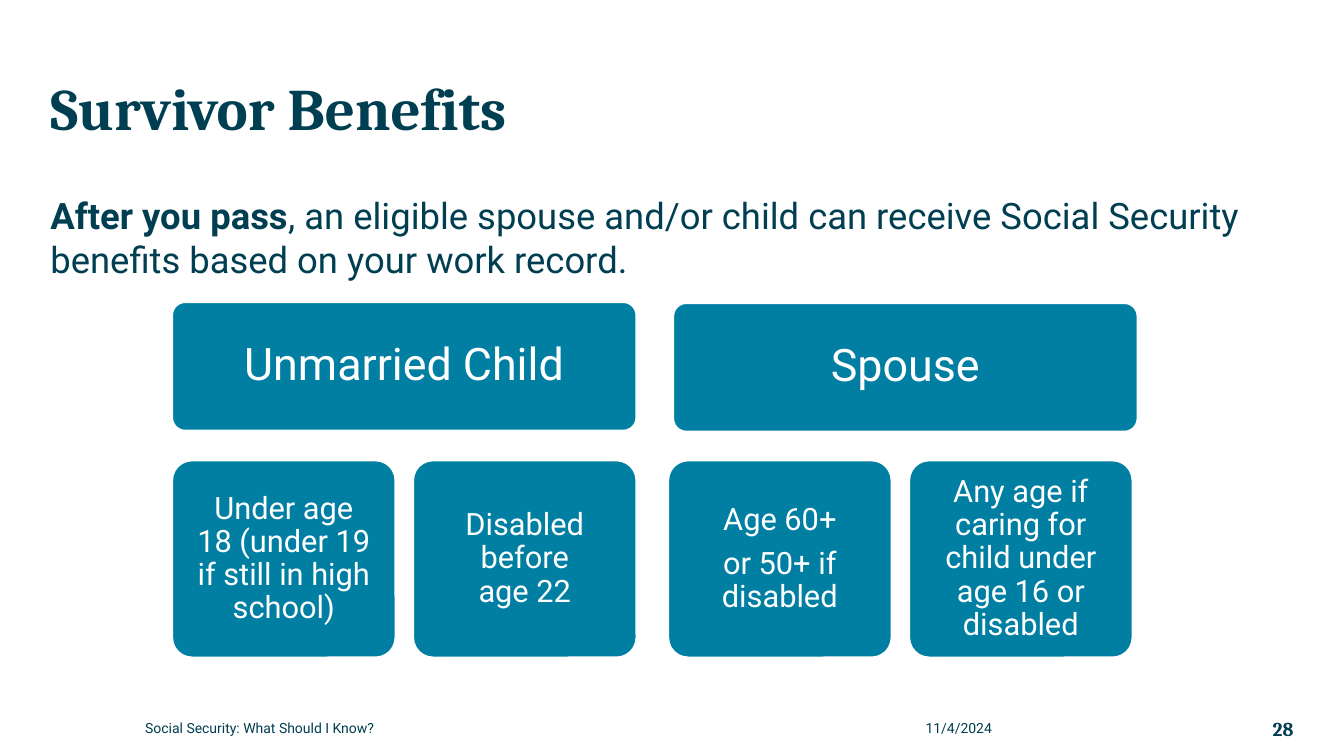
from dataclasses import dataclass

import pptx
import pptx.dml.color
import pptx.enum.shapes
import pptx.enum.text
import pptx.util

Inches = pptx.util.Inches
Pt = pptx.util.Pt
ALIGN = pptx.enum.text.PP_ALIGN
ANCHOR = pptx.enum.text.MSO_ANCHOR


@dataclass(frozen=True)
class Theme:
    ink: str = "003E51"
    card: str = "007FA3"
    white: str = "FFFFFF"
    heading_font: str = "Cambria"
    body_font: str = "Roboto"
    title: int = 42
    group: int = 32
    intro: int = 26
    condition: int = 22
    page: int = 14
    footer: int = 10


theme = Theme()


def style_text(frame, size, color=theme.ink, font=theme.body_font, bold=False,
               align=ALIGN.LEFT, anchor=ANCHOR.MIDDLE, inset=0, line_spacing=1.0):
    """Apply one look to every run of a text frame."""
    frame.word_wrap = True
    frame.auto_size = pptx.enum.text.MSO_AUTO_SIZE.NONE
    frame.vertical_anchor = anchor
    frame.margin_left = frame.margin_right = Inches(inset)
    frame.margin_top = frame.margin_bottom = Inches(inset)
    for paragraph in frame.paragraphs:
        paragraph.alignment = align
        paragraph.line_spacing = line_spacing
        for run in paragraph.runs:
            run.font.size = Pt(size)
            run.font.name = font
            run.font.bold = bold
            run.font.color.rgb = pptx.dml.color.RGBColor.from_string(color)


def add_card(left, top, width, height, text, size, inset):
    card = slide.shapes.add_shape(
        pptx.enum.shapes.MSO_SHAPE.ROUNDED_RECTANGLE,
        Inches(left), Inches(top), Inches(width), Inches(height))
    card.adjustments[0] = 0.1
    card.shadow.inherit = False
    card.fill.solid()
    card.fill.fore_color.rgb = pptx.dml.color.RGBColor.from_string(theme.card)
    card.line.color.rgb = pptx.dml.color.RGBColor.from_string(theme.white)
    card.line.width = Pt(1)
    card.text_frame.text = text
    style_text(card.text_frame, size, theme.white, align=ALIGN.CENTER,
               inset=inset, line_spacing=0.9)
    for paragraph in card.text_frame.paragraphs:
        paragraph.space_after = Pt(round(size * 0.35))
    return card


presentation = pptx.Presentation()
presentation.slide_width = Inches(13.33)
presentation.slide_height = Inches(7.5)
slide = presentation.slides.add_slide(presentation.slide_layouts.get_by_name("Title Only"))

title = slide.shapes.title
title.left, title.top = Inches(0.5), Inches(0.5)
title.width, title.height = Inches(12.33), Inches(0.92)
title.text_frame.text = "Survivor Benefits"
style_text(title.text_frame, theme.title, font=theme.heading_font, bold=True,
           anchor=ANCHOR.BOTTOM, line_spacing=0.9)

intro = slide.shapes.add_textbox(Inches(0.5), Inches(1.92), Inches(12.33), Inches(1))
intro.text_frame.text = "After you pass"
intro.text_frame.paragraphs[0].add_run().text = (
    ", an eligible spouse and/or child can receive Social Security "
    "benefits based on your work record.")
style_text(intro.text_frame, theme.intro, anchor=ANCHOR.TOP)
intro.text_frame.paragraphs[0].runs[0].font.bold = True

# Each survivor: name, left and top of its header, left of its first condition
survivors = [
    ("Unmarried Child", 1.71, 3.0, 1.71,
     ["Under age 18 (under 19 if still in high school)", "Disabled before"]),
    ("Spouse", 6.68, 3.01, 6.63,
     ["Age 60+\nor 50+ if disabled",
      "Any age if caring for child under age 16 or disabled"]),
]
condition_cards = {}
for survivor, header_left, header_top, first_left, conditions in survivors:
    add_card(header_left, header_top, 4.6, 1.27, survivor, theme.group, 0.17)
    for column, condition in enumerate(conditions):
        condition_cards[condition] = add_card(
            first_left + column * 2.39, 4.57, 2.21, 1.95,
            condition, theme.condition, 0.15)

# The wide gap before "age 22" is one space with extra character spacing
disabled_frame = condition_cards["Disabled before"].text_frame
gap = disabled_frame.paragraphs[0].add_run()
gap.text = " "
disabled_frame.paragraphs[0].add_run().text = "age 22"
style_text(disabled_frame, theme.condition, theme.white, align=ALIGN.CENTER,
           inset=0.15, line_spacing=0.9)
gap.font._element.set("spc", "3200")

footers = [
    ("Social Security: What Should I Know?", 1.44, 7.74,
     theme.footer, theme.body_font, False, ALIGN.LEFT),
    ("11/4/2024", 9.18, 2.53, theme.footer, theme.body_font, False, ALIGN.LEFT),
    ("28", 11.72, 1.11, theme.page, theme.heading_font, True, ALIGN.RIGHT),
]
for text, left, width, size, font, bold, align in footers:
    footer = slide.shapes.add_textbox(Inches(left), Inches(7.09), Inches(width), Inches(0.27))
    footer.text_frame.text = text
    style_text(footer.text_frame, size, font=font, bold=bold, align=align)

presentation.save("out.pptx")
